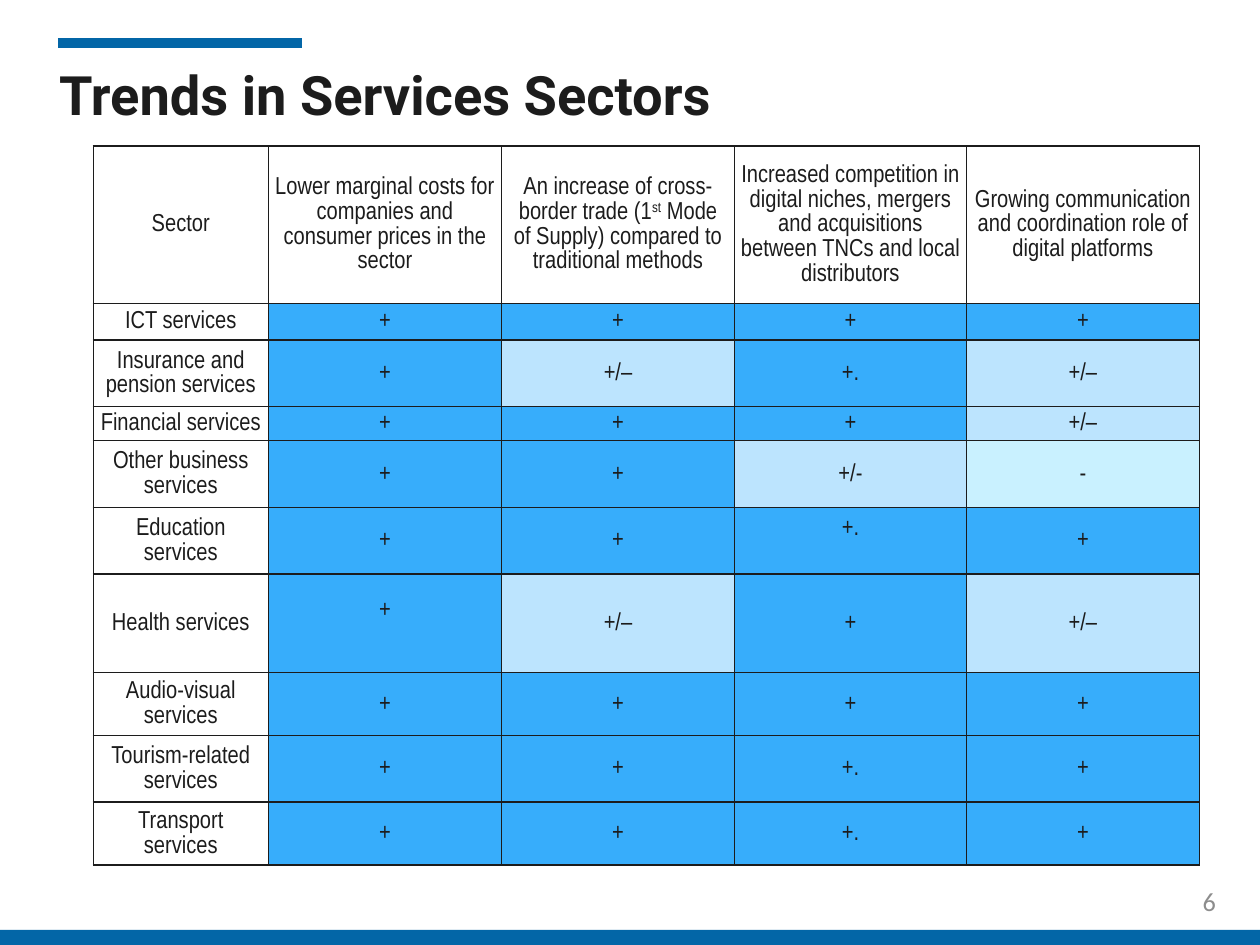
import lxml.etree
import pptx
import pptx.dml.color
import pptx.enum.shapes
import pptx.enum.text
import pptx.oxml
import pptx.oxml.ns
import pptx.util

Inches = pptx.util.Inches
Pt = pptx.util.Pt
Align = pptx.enum.text.PP_ALIGN
Anchor = pptx.enum.text.MSO_ANCHOR

BLUE = "0366A7"
INK = "1C1C1C"
GRAY = "8D8D8D"
RATING_FILLS = {"+": "37ADFB", "+.": "37ADFB", "+/–": "BCE4FE", "+/-": "BCE4FE", "-": "C9F1FF"}

HEADERS = [
    ["Sector"],
    ["Lower marginal costs for companies and consumer prices in the sector"],
    ["An increase of cross-border trade (1", "st", " Mode of Supply) compared to traditional methods"],
    ["Increased competition in digital niches, mergers and acquisitions between TNCs and local distributors"],
    ["Growing communication and coordination role of digital platforms"],
]
SECTORS = [
    ("ICT services", 0.29, ["+", "+", "+", "+"]),
    ("Insurance and pension services", 0.53, ["+", "+/–", "+.", "+/–"]),
    ("Financial services", 0.27, ["+", "+", "+", "+/–"]),
    ("Other business services", 0.53, ["+", "+", "+/-", "-"]),
    ("Education services", 0.53, ["+", "+", "+.", "+"]),
    ("Health services", 0.78, ["+", "+/–", "+", "+/–"]),
    ("Audio-visual services", 0.46, ["+", "+", "+", "+"]),
    ("Tourism-related services", 0.53, ["+", "+", "+.", "+"]),
    ("Transport services", 0.46, ["+", "+", "+.", "+"]),
]
HEADER_HEIGHT = 1.17
COLUMN_WIDTHS = [1.39, 1.85, 1.85, 1.84, 1.85]
RAISED_RATINGS = {(5, 3), (6, 1)}


def color(value):
    return pptx.dml.color.RGBColor.from_string(value)


def apply(target, values):
    for name, value in values.items():
        setattr(target, name, value)


class SlideBuilder:
    def __init__(self, presentation):
        self.slide = presentation.slides.add_slide(presentation.slide_layouts[6])
        self.table_font = {"name": "Arial Narrow", "size": Pt(14), "bold": False}
        self.insets = {
            "margin_left": Inches(0.13), "margin_right": Inches(0.13),
            "margin_top": Inches(0.06), "margin_bottom": Inches(0.06),
        }
        self.cell_format = {
            "margin_left": Inches(0.05), "margin_right": Inches(0.05),
            "margin_top": 0, "margin_bottom": 0, "vertical_anchor": Anchor.MIDDLE,
        }

    def bar(self, left, top, width, height, fill):
        shape = self.slide.shapes.add_shape(
            pptx.enum.shapes.MSO_SHAPE.RECTANGLE,
            Inches(left), Inches(top), Inches(width), Inches(height))
        shape.shadow.inherit = False
        shape.fill.solid()
        shape.fill.fore_color.rgb = color(fill)
        shape.line.fill.background()

    def line(self, left, right, y, ink, width):
        connector = self.slide.shapes.add_connector(
            pptx.enum.shapes.MSO_CONNECTOR.STRAIGHT,
            Inches(left), Inches(y), Inches(right), Inches(y))
        connector.line.color.rgb = color(ink)
        connector.line.width = Pt(width)
        lxml.etree.SubElement(connector._element.spPr, pptx.oxml.ns.qn("a:effectLst"))

    def text(self, left, top, width, height, content, font, ink, anchor, alignment):
        shape = self.slide.shapes.add_textbox(
            Inches(left), Inches(top), Inches(width), Inches(height))
        apply(shape.text_frame, {**self.insets, "word_wrap": True, "vertical_anchor": anchor})
        paragraph = shape.text_frame.paragraphs[0]
        paragraph.alignment = alignment
        self.run(paragraph, content, font, ink)

    def run(self, paragraph, content, font, ink):
        run = paragraph.add_run()
        run.text = content
        apply(run.font, font)
        run.font.color.rgb = color(ink)
        return run

    def cell(self, cell, parts, fill=None, bottom=0):
        apply(cell, {**self.cell_format, "margin_bottom": Inches(bottom)})
        paragraph = cell.text_frame.paragraphs[0]
        apply(paragraph, {"alignment": Align.CENTER, "line_spacing": 1.07})
        for part in parts:
            run = self.run(paragraph, part, self.table_font, INK)
            if part == "st":
                run._r.get_or_add_rPr().set("baseline", "30000")
        self.borders(cell)
        if fill:
            cell.fill.solid()
            cell.fill.fore_color.rgb = color(fill)
        else:
            cell.fill.background()

    def borders(self, cell):
        properties = cell._tc.get_or_add_tcPr()
        for side in ("lnL", "lnR", "lnT", "lnB"):
            properties.append(pptx.oxml.parse_xml(
                f'<a:{side} {pptx.oxml.ns.nsdecls("a")} w="{Pt(1)}">'
                f'<a:solidFill><a:srgbClr val="{INK}"/></a:solidFill></a:{side}>'))

    def table(self, left, top):
        heights = [HEADER_HEIGHT] + [height for _, height, _ in SECTORS]
        table = self.slide.shapes.add_table(
            len(heights), len(COLUMN_WIDTHS), Inches(left), Inches(top),
            Inches(sum(COLUMN_WIDTHS)), Inches(sum(heights))).table
        apply(table, {"first_row": False, "horz_banding": False})
        for column, width in zip(table.columns, COLUMN_WIDTHS):
            column.width = Inches(width)
        for row, height in zip(table.rows, heights):
            row.height = Inches(height)
        for column, parts in enumerate(HEADERS):
            self.cell(table.cell(0, column), parts)
        for row, (sector, _, ratings) in enumerate(SECTORS, 1):
            self.cell(table.cell(row, 0), [sector])
            for column, rating in enumerate(ratings, 1):
                bottom = 0.2 if (row, column) in RAISED_RATINGS else 0
                self.cell(table.cell(row, column), [rating], RATING_FILLS[rating], bottom)


def main():
    presentation = pptx.Presentation()
    apply(presentation, {"slide_width": Inches(10), "slide_height": Inches(7.5)})
    builder = SlideBuilder(presentation)
    builder.bar(0, 7.38, 10, 0.12, BLUE)
    builder.line(0.46, 2.4, 0.34, BLUE, 6)
    builder.text(0.34, 0.43, 9, 1.25, "Trends in Services Sectors",
                 {"name": "Roboto", "size": Pt(31), "bold": True}, INK, Anchor.TOP, Align.LEFT)
    builder.text(7.45, 6.95, 2.33, 0.4, "6",
                 {"name": "Calibri", "size": Pt(15)}, GRAY, Anchor.MIDDLE, Align.RIGHT)
    builder.table(0.74, 1.16)
    presentation.save("out.pptx")


if __name__ == "__main__":
    main()
